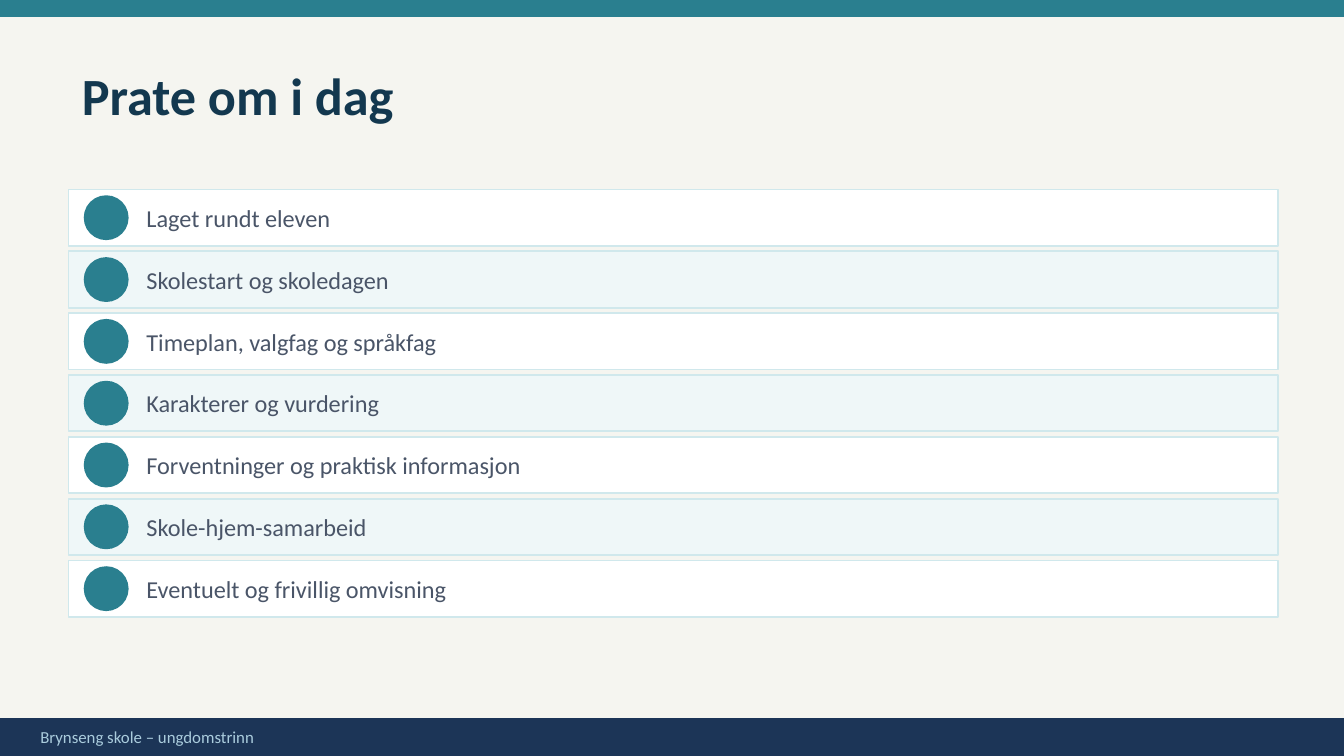
from dataclasses import dataclass

from pptx import Presentation
from pptx.dml.color import RGBColor
from pptx.enum.shapes import MSO_SHAPE
from pptx.enum.text import MSO_ANCHOR, PP_ALIGN
from pptx.slide import Slide
from pptx.text.text import TextFrame
from pptx.util import Inches, Pt


@dataclass(frozen=True)
class Theme:
    font: str = "Calibri"
    page: str = "F5F5F0"
    teal: str = "2A7F8F"
    navy: str = "1C3557"
    title: str = "13384F"
    body: str = "4A5568"
    footer: str = "AACCDD"
    edge: str = "D0E8EC"
    rows: tuple[str, str] = ("FFFFFF", "EFF7F8")
    title_size: int = 28
    body_size: int = 13
    footer_size: int = 9


@dataclass(frozen=True)
class Box:
    left: float
    top: float
    width: float
    height: float

    def place(self) -> tuple[Inches, ...]:
        return tuple(Inches(n) for n in (self.left, self.top, self.width, self.height))


@dataclass(frozen=True)
class Topic:
    text: str
    top: float
    fill: str


THEME = Theme()
WIDTH = Inches(10)
HEIGHT = WIDTH * 9 // 16
FIRST, STEP = 1.41, 0.46
NAMES = (
    "Laget rundt eleven",
    "Skolestart og skoledagen",
    "Timeplan, valgfag og språkfag",
    "Karakterer og vurdering",
    "Forventninger og praktisk informasjon",
    "Skole-hjem-samarbeid",
    "Eventuelt og frivillig omvisning",
)
TOPICS = [
    Topic(name, FIRST + i * STEP, THEME.rows[i % 2]) for i, name in enumerate(NAMES)
]


def apply(target: object, values: dict[str, object]) -> None:
    for key, value in values.items():
        setattr(target, key, value)


def draw_shape(slide: Slide, kind: MSO_SHAPE, box: Box, fill: str, edge: str) -> None:
    shape = slide.shapes.add_shape(kind, *box.place())
    shape.shadow.inherit = False
    shape.fill.solid()
    shape.fill.fore_color.rgb = RGBColor.from_string(fill)
    shape.line.color.rgb = RGBColor.from_string(edge)
    shape.line.width = Pt(1)


def write(frame: TextFrame, text: str, size: int, color: str, bold: bool = False) -> None:
    frame.text = text
    para = frame.paragraphs[0]
    para.alignment = PP_ALIGN.LEFT
    font = para.runs[0].font
    apply(font, {"name": THEME.font, "size": Pt(size), "bold": bold})
    font.color.rgb = RGBColor.from_string(color)


def draw_text(slide: Slide, box: Box, text: str, size: int, color: str) -> None:
    frame = slide.shapes.add_textbox(*box.place()).text_frame
    sides = ("margin_left", "margin_top", "margin_right", "margin_bottom")
    apply(frame, dict.fromkeys(sides, 0))
    apply(frame, {"word_wrap": True, "vertical_anchor": MSO_ANCHOR.MIDDLE})
    write(frame, text, size, color)


def draw_title(slide: Slide, box: Box, text: str) -> None:
    title = slide.shapes.title
    apply(title, dict(zip(("left", "top", "width", "height"), box.place())))
    apply(title.text_frame, {"word_wrap": True, "vertical_anchor": MSO_ANCHOR.TOP})
    write(title.text_frame, text, THEME.title_size, THEME.title, True)


def draw_topic(slide: Slide, topic: Topic) -> None:
    row = Box(0.51, topic.top, 9, 0.42)
    dot = Box(0.63, topic.top + 0.05, 0.32, 0.32)
    label = Box(1.09, topic.top + 0.03, 8.2, 0.36)
    draw_shape(slide, MSO_SHAPE.RECTANGLE, row, topic.fill, THEME.edge)
    draw_shape(slide, MSO_SHAPE.OVAL, dot, THEME.teal, THEME.teal)
    draw_text(slide, label, topic.text, THEME.body_size, THEME.body)


def main() -> None:
    deck = Presentation()
    apply(deck, {"slide_width": WIDTH, "slide_height": HEIGHT})
    slide = deck.slides.add_slide(deck.slide_layouts[5])
    slide.background.fill.solid()
    slide.background.fill.fore_color.rgb = RGBColor.from_string(THEME.page)

    for box, color in (
        (Box(0, 0, 10, 0.12), THEME.teal),
        (Box(0, 5.35, 10, 0.28), THEME.navy),
    ):
        draw_shape(slide, MSO_SHAPE.RECTANGLE, box, color, color)
    draw_text(
        slide,
        Box(0.3, 5.36, 9.4, 0.24),
        "Brynseng skole – ungdomstrinn",
        THEME.footer_size,
        THEME.footer,
    )
    for topic in TOPICS:
        draw_topic(slide, topic)
    draw_title(slide, Box(0.51, 0.42, 5, 0.88), "Prate om i dag")
    deck.save("out.pptx")


if __name__ == "__main__":
    main()
